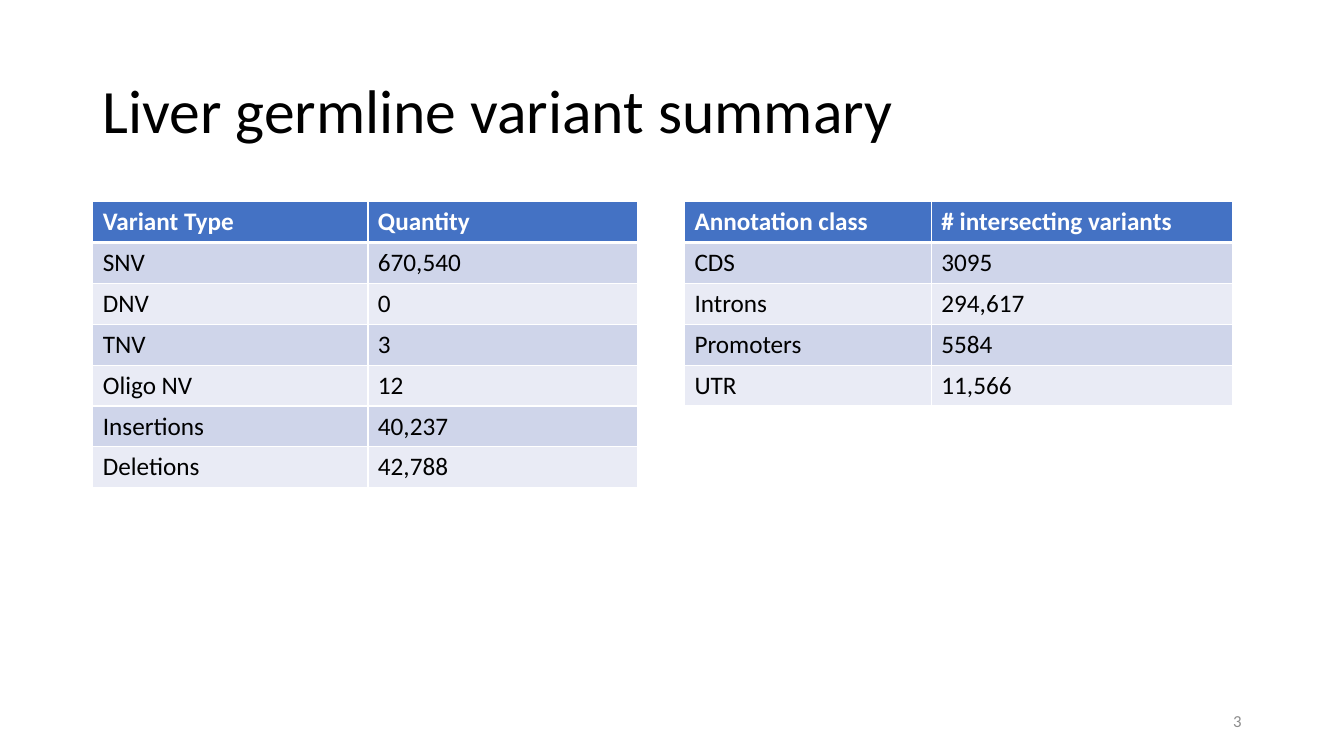
from lxml import etree
from pptx import Presentation
from pptx.dml.color import RGBColor
from pptx.enum.text import MSO_ANCHOR, PP_ALIGN
from pptx.oxml.ns import qn
from pptx.util import Pt

MIDDLE = MSO_ANCHOR.MIDDLE
LEFT, RIGHT = PP_ALIGN.LEFT, PP_ALIGN.RIGHT
FONT = "Calibri"
COLORS = {
    "white": "FFFFFF",
    "black": "000000",
    "header": "4472C4",
    "odd_row": "CFD5EA",
    "even_row": "E9EBF5",
    "page_number": "8C8C8C",
}
ROW_HEIGHT = 29.2
TABLE_TOP = 144


def write(frame, text, size=18, color="black", bold=False, align=LEFT):
    para = frame.paragraphs[0]
    para.alignment = align
    span = para.add_run()
    span.text = text
    span.font.name = FONT
    span.font.size = Pt(size)
    span.font.bold = bold
    span.font.color.rgb = RGBColor.from_string(COLORS[color])
    return para


def add_border(cell, side, width):
    properties = cell._tc.get_or_add_tcPr()
    line = etree.SubElement(properties, qn(f"a:ln{side}"), w=str(Pt(width)))
    fill = etree.SubElement(line, qn("a:solidFill"))
    etree.SubElement(fill, qn("a:srgbClr"), val=COLORS["white"])


deck = Presentation()
deck.slide_width, deck.slide_height = Pt(960), Pt(540)
page = deck.slides.add_slide(deck.slide_layouts[5])

# Title
title = page.shapes.title
title.left, title.top, title.width, title.height = Pt(66), Pt(28.75), Pt(828), Pt(104.4)
title.text_frame.vertical_anchor = MIDDLE
title.text_frame.word_wrap = True
write(title.text_frame, "Liver germline variant summary", size=44).line_spacing = 0.9

# Tables: left edge, column widths, rows
variant_types = [
    ("Variant Type", "Quantity"),
    ("SNV", "670,540"),
    ("DNV", "0"),
    ("TNV", "3"),
    ("Oligo NV", "12"),
    ("Insertions", "40,237"),
    ("Deletions", "42,788"),
]
annotation_classes = [
    ("Annotation class", "# intersecting variants"),
    ("CDS", "3095"),
    ("Introns", "294,617"),
    ("Promoters", "5584"),
    ("UTR", "11,566"),
]
tables = [
    (66.3, (196.5, 192.3), variant_types),
    (488.9, (176.4, 215.3), annotation_classes),
]
for left, widths, rows in tables:
    table = page.shapes.add_table(
        len(rows), len(widths), Pt(left), Pt(TABLE_TOP),
        Pt(sum(widths)), Pt(ROW_HEIGHT * len(rows)),
    ).table
    for column, width in zip(table.columns, widths):
        column.width = Pt(width)
    for r, values in enumerate(rows):
        table.rows[r].height = Pt(ROW_HEIGHT)
        is_header = r == 0
        band = "header" if is_header else "odd_row" if r % 2 else "even_row"
        for c, value in enumerate(values):
            cell = table.cell(r, c)
            for side in "LRTB":
                below_header = (is_header and side == "B") or (r == 1 and side == "T")
                add_border(cell, side, 3 if below_header else 1)
            cell.fill.solid()
            cell.fill.fore_color.rgb = RGBColor.from_string(COLORS[band])
            write(cell.text_frame, value, bold=is_header,
                  color="white" if is_header else "black")

# Page number
box = page.shapes.add_textbox(Pt(678), Pt(500.5), Pt(216), Pt(28.75))
box.text_frame.word_wrap = True
box.text_frame.vertical_anchor = MIDDLE
write(box.text_frame, "3", size=12, color="page_number", align=RIGHT)

deck.save("out.pptx")
